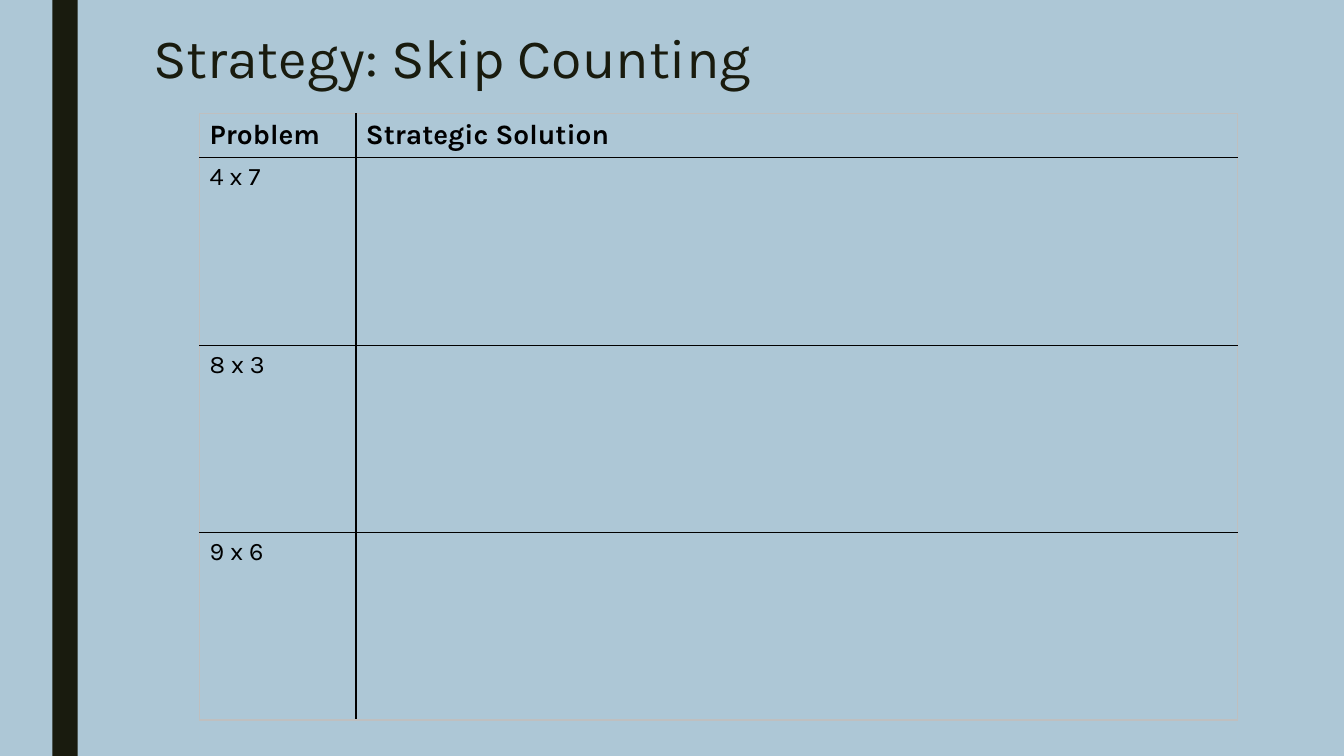
from dataclasses import dataclass

from lxml.etree import SubElement
from pptx import Presentation
from pptx.dml.color import RGBColor as Color
from pptx.enum.shapes import MSO_SHAPE as Shape
from pptx.enum.text import MSO_ANCHOR as Anchor
from pptx.oxml.ns import qn
from pptx.util import Inches, Pt


@dataclass(frozen=True)
class Theme:
    """Colours, font and type sizes of the deck."""
    background: str = "ADC7D6"
    dark: str = "191B0E"
    text: str = "000000"
    grid: str = "000000"
    frame: str = "BFBFBF"
    font: str = "Karla"
    title_size: float = 39.6
    header_size: float = 20
    body_size: float = 18


THEME = Theme()
ROWS = [
    ("Problem", "Strategic Solution"),
    ("4 x 7", ""),
    ("8 x 3", ""),
    ("9 x 6", ""),
]


def add_span(para, text, size, color, bold=False):
    """Add one styled run to a paragraph."""
    span = para.add_run()
    span.text = text
    span.font.name = THEME.font
    span.font.size = Pt(size)
    span.font.bold = bold
    span.font.color.rgb = Color.from_string(color)


def add_side_bar(page, left, top, width, height):
    """Draw the dark vertical bar."""
    bar = page.shapes.add_shape(
        Shape.RECTANGLE, Inches(left), Inches(top), Inches(width), Inches(height))
    bar.shadow.inherit = False
    bar.fill.solid()
    bar.fill.fore_color.rgb = Color.from_string(THEME.dark)
    bar.line.fill.background()


def add_title(page, text, left, top, width, height):
    """Place the slide title, centred vertically in its box."""
    box = page.shapes.add_textbox(
        Inches(left), Inches(top), Inches(width), Inches(height))
    frame = box.text_frame
    frame.word_wrap = True
    frame.vertical_anchor = Anchor.MIDDLE
    para = frame.paragraphs[0]
    para.line_spacing = 0.89
    add_span(para, text, THEME.title_size, THEME.dark)


def set_borders(cell, outer_sides):
    """Rule a cell, with the frame colour on its outer sides."""
    properties = cell._tc.get_or_add_tcPr()
    for side in ("L", "R", "T", "B"):
        line = SubElement(properties, qn(f"a:ln{side}"), w=str(Pt(1)))
        fill = SubElement(line, qn("a:solidFill"))
        color = THEME.frame if side in outer_sides else THEME.grid
        SubElement(fill, qn("a:srgbClr"), val=color)


def add_problem_table(page, rows, left, top, width, height,
                      problem_width=1.55, header_height=0.43):
    """Build the table of problems with room for each solution."""
    last_row, last_column = len(rows) - 1, len(rows[0]) - 1
    table = page.shapes.add_table(
        len(rows), len(rows[0]),
        Inches(left), Inches(top), Inches(width), Inches(height)).table
    table.columns[0].width = Inches(problem_width)
    table.columns[1].width = Inches(width - problem_width)
    for r, texts in enumerate(rows):
        is_header = r == 0
        body_height = (height - header_height) / last_row
        table.rows[r].height = Inches(header_height if is_header else body_height)
        size = THEME.header_size if is_header else THEME.body_size
        for c, text in enumerate(texts):
            cell = table.cell(r, c)
            edges = {"T": r == 0, "B": r == last_row,
                     "L": c == 0, "R": c == last_column}
            set_borders(cell, [side for side, outer in edges.items() if outer])
            cell.fill.background()
            if text:
                add_span(cell.text_frame.paragraphs[0], text, size,
                         THEME.text, bold=is_header)


def build_strategy_slide(deck):
    """Compose the skip counting slide."""
    page = deck.slides.add_slide(deck.slide_layouts[6])
    page.background.fill.solid()
    page.background.fill.fore_color.rgb = Color.from_string(THEME.background)
    add_side_bar(page, 0.52, 0, 0.25, 7.5)
    add_title(page, "Strategy: Skip Counting", 1.42, 0.23, 10.5, 0.75)
    add_problem_table(page, ROWS, 1.98, 1.13, 10.29, 6.01)


def main():
    """Create and save the deck."""
    deck = Presentation()
    deck.slide_width, deck.slide_height = Inches(13.33), Inches(7.5)
    build_strategy_slide(deck)
    deck.save("out.pptx")


if __name__ == "__main__":
    main()
